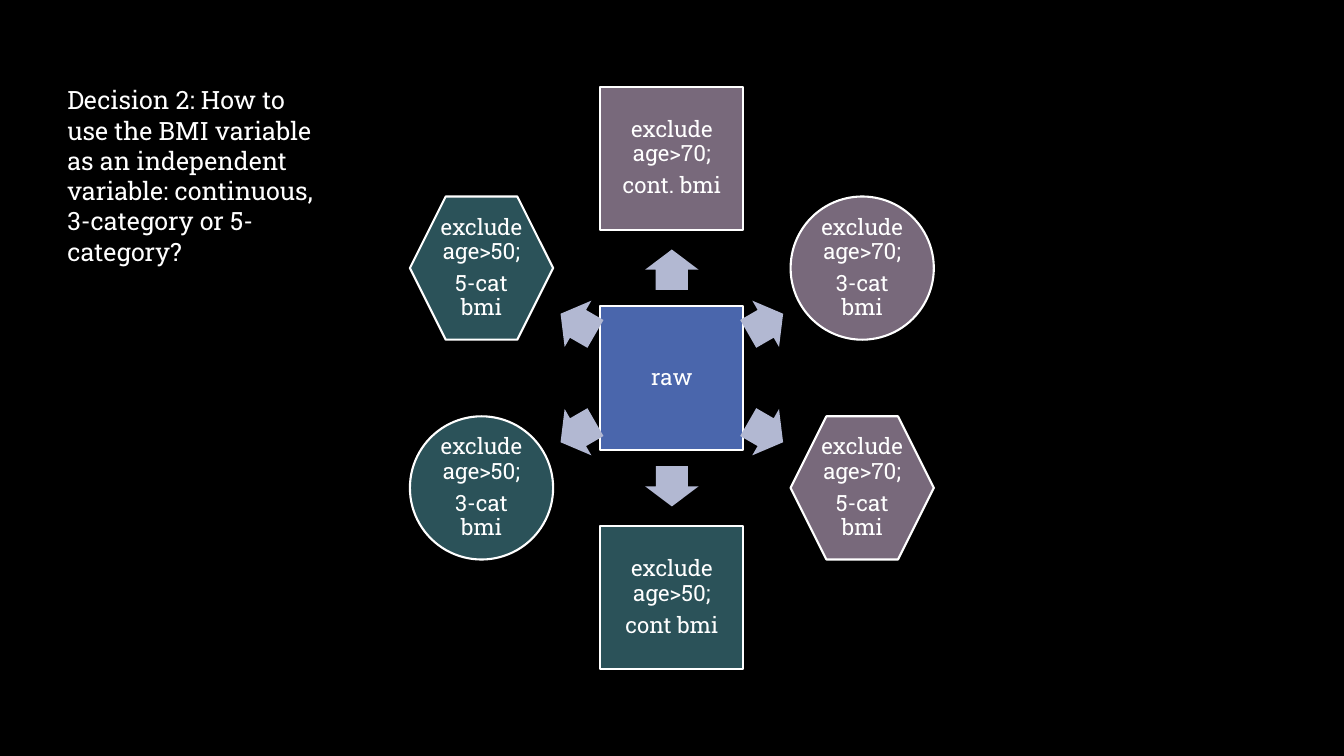
"""Build a slide with a ring of analysis choices around the raw data."""
from dataclasses import dataclass
from math import cos, radians, sin

from pptx import Presentation
from pptx.dml.color import RGBColor
from pptx.enum.shapes import MSO_SHAPE
from pptx.enum.text import MSO_ANCHOR, MSO_AUTO_SIZE, PP_ALIGN
from pptx.util import Pt

SQUARE = MSO_SHAPE.RECTANGLE
CIRCLE = MSO_SHAPE.OVAL
HEXAGON = MSO_SHAPE.HEXAGON
ARROW = MSO_SHAPE.RIGHT_ARROW
MIDDLE = MSO_ANCHOR.MIDDLE
CENTER = PP_ALIGN.CENTER
FIT_SHAPE = MSO_AUTO_SIZE.SHAPE_TO_FIT_TEXT

BLACK = RGBColor(0x00, 0x00, 0x00)
WHITE = RGBColor(0xFF, 0xFF, 0xFF)
BLUE = RGBColor(0x4A, 0x66, 0xAC)
MAUVE = RGBColor(0x78, 0x69, 0x7B)
TEAL = RGBColor(0x2B, 0x52, 0x59)
LAVENDER = RGBColor(0xB2, 0xB8, 0xD2)

FONT = "Roboto Slab"
CENTER_X, CENTER_Y = 479.9, 270
NODE_SIZE = 102.3
NODE_RADIUS = 157
ARROW_RADIUS = 77.4
ARROW_LENGTH, ARROW_WIDTH = 28.8, 38.2

NODE_FRAME = {
    "word_wrap": True,
    "vertical_anchor": MIDDLE,
    "margin_left": Pt(1.6),
    "margin_right": Pt(1.6),
    "margin_top": Pt(1.6),
    "margin_bottom": Pt(1.6),
}
NODE_PARAGRAPH = {"alignment": CENTER, "line_spacing": 0.9, "space_after": Pt(5.6)}
TITLE_FRAME = {"word_wrap": True, "auto_size": FIT_SHAPE}
TITLE = (
    "Decision 2: How to use the BMI variable as an independent variable: "
    "continuous, 3-category or 5-category?"
)


@dataclass(frozen=True)
class Choice:
    angle: int
    kind: MSO_SHAPE
    color: RGBColor
    lines: tuple[str, ...]


CHOICES = (
    Choice(-90, SQUARE, MAUVE, ("exclude age>70;", "cont. bmi")),
    Choice(-30, CIRCLE, MAUVE, ("exclude age>70;", "3-cat bmi")),
    Choice(30, HEXAGON, MAUVE, ("exclude age>70;", "5-cat bmi")),
    Choice(90, SQUARE, TEAL, ("exclude age>50;", "cont bmi")),
    Choice(150, CIRCLE, TEAL, ("exclude age>50;", "3-cat bmi")),
    Choice(210, HEXAGON, TEAL, ("exclude age>50;", "5-cat bmi")),
)


def apply(target, values: dict) -> None:
    for name, value in values.items():
        setattr(target, name, value)


def write(frame, lines: tuple[str, ...], size: float, paragraph_format: dict) -> None:
    for index, line in enumerate(lines):
        para = frame.add_paragraph() if index else frame.paragraphs[0]
        apply(para, paragraph_format)
        span = para.add_run()
        span.text = line
        apply(span.font, {"name": FONT, "size": Pt(size)})
        span.font.color.rgb = WHITE


def add_on_ring(page, kind: MSO_SHAPE, angle: float, radius: float,
                width: float, height: float, color: RGBColor):
    left = CENTER_X + radius * cos(radians(angle)) - width / 2
    top = CENTER_Y + radius * sin(radians(angle)) - height / 2
    box = page.shapes.add_shape(kind, Pt(left), Pt(top), Pt(width), Pt(height))
    box.shadow.inherit = False
    box.fill.solid()
    box.fill.fore_color.rgb = color
    return box


def add_node(page, choice: Choice, radius: float) -> None:
    box = add_on_ring(page, choice.kind, choice.angle, radius,
                      NODE_SIZE, NODE_SIZE, choice.color)
    box.line.color.rgb = WHITE
    box.line.width = Pt(1.5)
    apply(box.text_frame, NODE_FRAME)
    write(box.text_frame, choice.lines, 16, NODE_PARAGRAPH)


def add_arrow(page, angle: int) -> None:
    arrow = add_on_ring(page, ARROW, angle, ARROW_RADIUS,
                        ARROW_LENGTH, ARROW_WIDTH, LAVENDER)
    arrow.line.fill.background()
    arrow.adjustments[0] = 0.6
    arrow.adjustments[1] = 0.5
    arrow.rotation = angle % 360


def add_title(page) -> None:
    box = page.shapes.add_textbox(Pt(41), Pt(56.9), Pt(192.2), Pt(138.2))
    apply(box.text_frame, TITLE_FRAME)
    write(box.text_frame, (TITLE,), 18, {})


def main() -> None:
    deck = Presentation()
    apply(deck, {"slide_width": Pt(960), "slide_height": Pt(540)})
    page = deck.slides.add_slide(deck.slide_layouts[6])
    page.background.fill.solid()
    page.background.fill.fore_color.rgb = BLACK
    add_node(page, Choice(0, SQUARE, BLUE, ("raw",)), 0)
    for choice in CHOICES:
        add_arrow(page, choice.angle)
        add_node(page, choice, NODE_RADIUS)
    add_title(page)
    deck.save("out.pptx")


if __name__ == "__main__":
    main()
